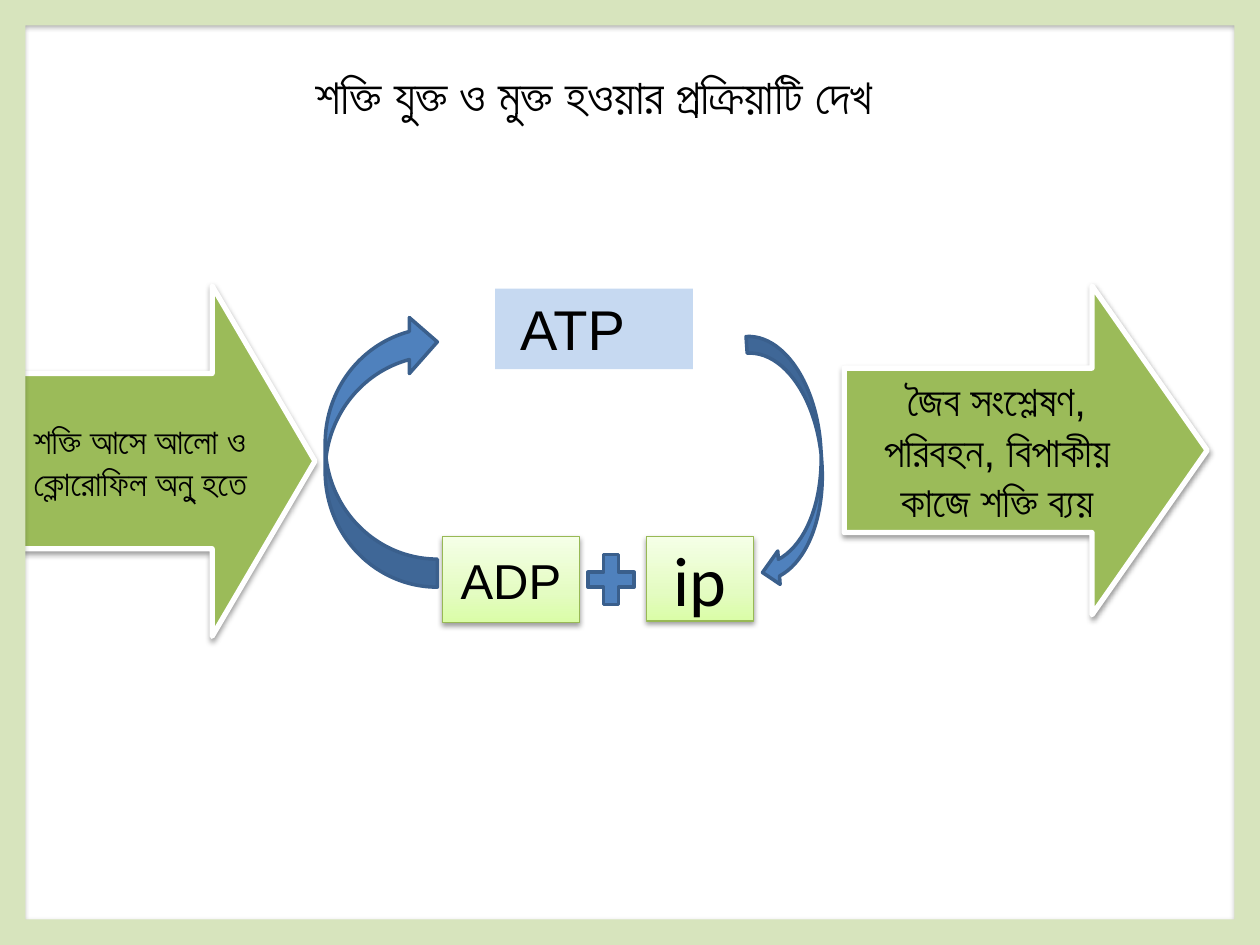
"""Build a slide showing how energy is bound and released in the ATP cycle."""
from copy import deepcopy
from dataclasses import dataclass
from typing import Optional

from lxml import etree
from pptx import Presentation
from pptx.dml.color import RGBColor
from pptx.enum.shapes import MSO_SHAPE
from pptx.enum.text import MSO_ANCHOR, PP_ALIGN
from pptx.oxml.ns import qn
from pptx.util import Pt

ARROW, FRAME, RECTANGLE = MSO_SHAPE.RIGHT_ARROW, MSO_SHAPE.FRAME, MSO_SHAPE.RECTANGLE
CURVED_ARROW, PLUS = MSO_SHAPE.CURVED_LEFT_ARROW, MSO_SHAPE.MATH_PLUS
LEFT, CENTER = PP_ALIGN.LEFT, PP_ALIGN.CENTER
TOP, MIDDLE = MSO_ANCHOR.TOP, MSO_ANCHOR.MIDDLE

BLACK = RGBColor(0x00, 0x00, 0x00)
WHITE = RGBColor(0xFF, 0xFF, 0xFF)
GREEN = RGBColor(0x9B, 0xBB, 0x59)
PALE_GREEN = RGBColor(0xD7, 0xE4, 0xBD)
GREEN_EDGE = RGBColor(0x98, 0xB9, 0x55)
BLUE = RGBColor(0x4F, 0x81, 0xBD)
BLUE_EDGE = RGBColor(0x3A, 0x5F, 0x8C)
PALE_BLUE = RGBColor(0xC6, 0xD9, 0xF1)
LIME_STOPS = (
    (0, RGBColor(0xDA, 0xFD, 0xA7)),
    (0.35, RGBColor(0xE4, 0xFC, 0xC2)),
    (1, RGBColor(0xF5, 0xFF, 0xE7)),
)


@dataclass(frozen=True)
class Look:
    """Fill (None for the lime gradient), outline and shadow of a shape."""
    fill: Optional[RGBColor]
    edge: Optional[RGBColor] = None
    edge_width: float = 0
    shadow_distance: float = 0
    shadow_opacity: int = 38


@dataclass(frozen=True)
class Label:
    """Text with its font and placement."""
    text: str
    size: float
    font: str = "Arial"
    align: PP_ALIGN = CENTER
    anchor: MSO_ANCHOR = MIDDLE


@dataclass(frozen=True)
class Item:
    """One shape of the diagram, measured in points."""
    kind: MSO_SHAPE
    bounds: tuple[float, float, float, float]
    look: Look
    label: Optional[Label] = None
    rotation: float = 0
    adjustments: tuple[float, ...] = ()


ENERGY = Look(GREEN, WHITE, 3, 1.6)
BORDER = Look(PALE_GREEN, shadow_distance=1.8, shadow_opacity=35)
MOLECULE = Look(None, GREEN_EDGE, 0.75, 1.6)
CYCLE = Look(BLUE, BLUE_EDGE, 2)

TITLE = Label("শক্তি যুক্ত ও মুক্ত হওয়ার প্রক্রিয়াটি দেখ", 28, anchor=TOP)
TITLE_BOUNDS = (81.4, 33.8, 516.2, 41)
ITEMS = (
    Item(ARROW, (482.4, 163.4, 207.4, 187.9), ENERGY,
         Label("জৈব সংশ্লেষণ, পরিবহন, বিপাকীয় কাজে শক্তি ব্যয়", 24),
         adjustments=(0.5, 0.35)),
    Item(ARROW, (12.2, 163.4, 167.8, 200.2), ENERGY,
         Label("শক্তি আসে আলো ও ক্লোরোফিল অনু্ হতে", 20, align=LEFT),
         adjustments=(0.5, 0.35)),
    Item(FRAME, (0, 0, 720, 540), BORDER, adjustments=(0.027,)),
    Item(RECTANGLE, (369.4, 306.7, 61.2, 48.2), MOLECULE, Label("ip", 40, "Calibri")),
    Item(RECTANGLE, (252.7, 306.7, 78.5, 49), MOLECULE, Label("ADP", 28)),
    Item(CURVED_ARROW, (431.3, 190.8, 38.2, 144.7), CYCLE, rotation=356),
    Item(CURVED_ARROW, (185.8, 179.3, 64.1, 156.2), CYCLE, rotation=180),
    Item(RECTANGLE, (283, 164.9, 113, 46.1), Look(PALE_BLUE),
         Label(" ATP", 32, align=LEFT, anchor=TOP)),
    Item(PLUS, (331.2, 311.8, 36, 38.9), CYCLE),
)


def write_label(box, label: Label) -> None:
    frame = box.text_frame
    frame.word_wrap = True
    frame.vertical_anchor = label.anchor
    para = frame.paragraphs[0]
    para.alignment = label.align
    span = para.add_run()
    span.text = label.text
    for font in (para.font, span.font):
        font.name = label.font
        font.size = Pt(label.size)
        font.color.rgb = BLACK


def fill_lime(box) -> None:
    box.fill.gradient()
    box.fill.gradient_angle = 90
    stop_list = box.element.spPr.find(f".//{qn('a:gsLst')}")
    stop_list.insert(1, deepcopy(stop_list[0]))
    for stop, (position, color) in zip(box.fill.gradient_stops, LIME_STOPS):
        stop.position = position
        stop.color.rgb = color


def add_shadow(box, distance: float, opacity: int) -> None:
    effects = box.element.spPr.find(qn("a:effectLst"))
    shadow = etree.SubElement(
        effects, qn("a:outerShdw"), blurRad=str(Pt(3.1)), dist=str(Pt(distance)),
        dir="5400000", rotWithShape="0")
    color = etree.SubElement(shadow, qn("a:srgbClr"), val=str(BLACK))
    etree.SubElement(color, qn("a:alpha"), val=str(opacity * 1000))


def apply_look(box, look: Look) -> None:
    if look.fill is None:
        fill_lime(box)
    else:
        box.fill.solid()
        box.fill.fore_color.rgb = look.fill
    if look.edge is None:
        box.line.fill.background()
    else:
        box.line.color.rgb = look.edge
        box.line.width = Pt(look.edge_width)
    box.shadow.inherit = False
    if look.shadow_distance:
        add_shadow(box, look.shadow_distance, look.shadow_opacity)


def draw_item(page, item: Item) -> None:
    box = page.shapes.add_shape(item.kind, *map(Pt, item.bounds))
    box.rotation = item.rotation
    for index, value in enumerate(item.adjustments):
        box.adjustments[index] = value
    apply_look(box, item.look)
    if item.label:
        write_label(box, item.label)


def main() -> None:
    deck = Presentation()
    deck.slide_width, deck.slide_height = Pt(720), Pt(540)
    page = deck.slides.add_slide(deck.slide_layouts[5])
    title = page.shapes.title
    title.left, title.top, title.width, title.height = map(Pt, TITLE_BOUNDS)
    write_label(title, TITLE)
    for item in ITEMS:
        draw_item(page, item)
    deck.save("out.pptx")


if __name__ == "__main__":
    main()
